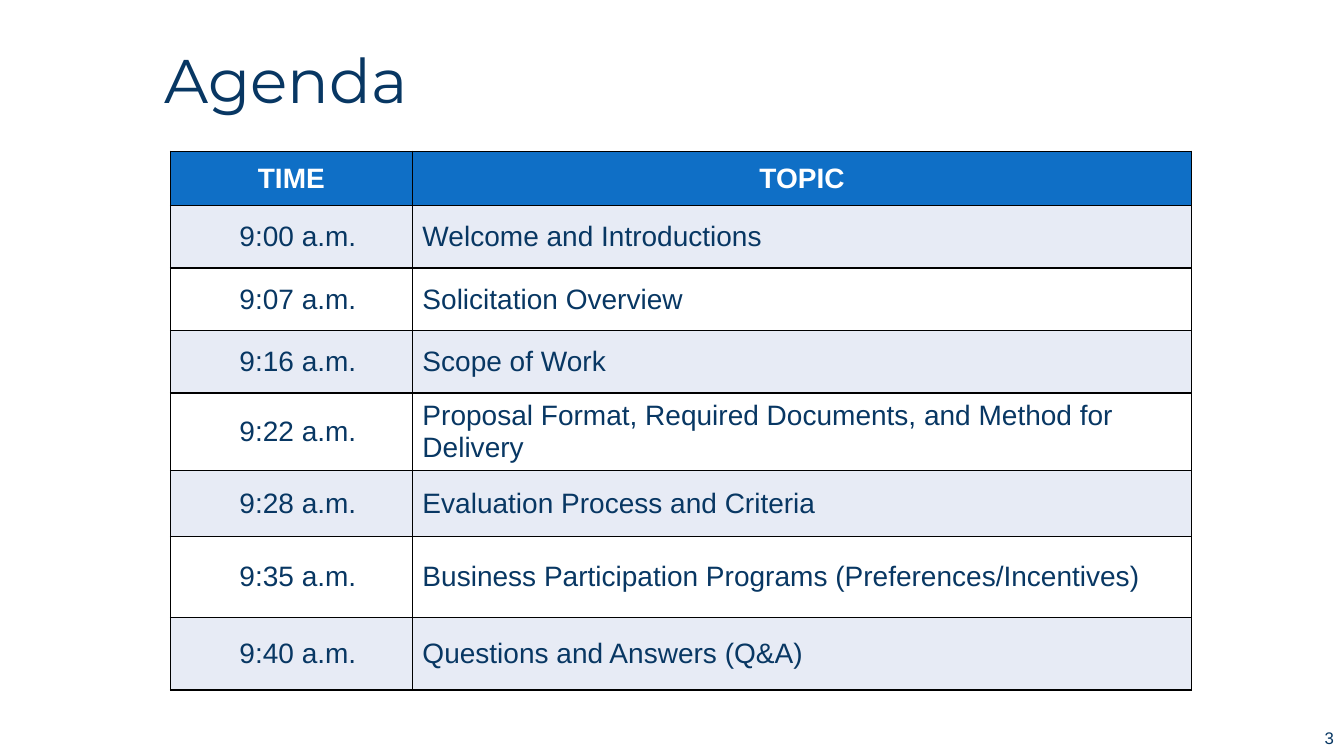
from dataclasses import dataclass

import lxml.etree
import pptx
import pptx.dml.color
import pptx.enum.text
import pptx.oxml.ns
import pptx.util

Inches = pptx.util.Inches
ALIGN = pptx.enum.text.PP_ALIGN
MIDDLE = pptx.enum.text.MSO_ANCHOR.MIDDLE


@dataclass(frozen=True)
class Theme:
    navy: str = "083763"
    blue: str = "0F6FC6"
    band: str = "E7EBF5"
    white: str = "FFFFFF"
    border: str = "000000"
    title_font: str = "Montserrat"
    body_font: str = "Arial"
    title_size: int = 44
    table_size: int = 20
    number_size: int = 12
    border_width: int = 1


AGENDA = [
    ("TIME", "TOPIC"),
    ("9:00 a.m.", "Welcome and Introductions"),
    ("9:07 a.m.", "Solicitation Overview"),
    ("9:16 a.m.", "Scope of Work"),
    ("9:22 a.m.", "Proposal Format, Required Documents, and Method for Delivery"),
    ("9:28 a.m.", "Evaluation Process and Criteria"),
    ("9:35 a.m.", "Business Participation Programs (Preferences/Incentives)"),
    ("9:40 a.m.", "Questions and Answers (Q&A)"),
]
COLUMN_WIDTHS = [2.4, 7.73]
ROW_HEIGHTS = [0.54, 0.62, 0.62, 0.62, 0.63, 0.66, 0.8, 0.72]
TIME_INDENT = 0.13


class SlideBuilder:
    def __init__(self, slide, theme):
        self.slide = slide
        self.theme = theme

    def fill_text(self, text_frame, text, color, font_format, paragraph_format):
        paragraph = text_frame.paragraphs[0]
        run = paragraph.add_run()
        run.text = text
        for target, values in ((paragraph, paragraph_format), (run.font, font_format)):
            for name, value in values.items():
                setattr(target, name, value)
        run.font.color.rgb = pptx.dml.color.RGBColor.from_string(color)
        return paragraph

    def text_box(self, text, bounds, font_format, paragraph_format):
        shape = self.slide.shapes.add_textbox(*map(Inches, bounds))
        shape.text_frame.word_wrap = True
        shape.text_frame.vertical_anchor = MIDDLE
        self.fill_text(shape.text_frame, text, self.theme.navy, font_format, paragraph_format)

    def border_cell(self, cell):
        properties = cell._tc.get_or_add_tcPr()
        width = str(pptx.util.Pt(self.theme.border_width))
        qn = pptx.oxml.ns.qn
        for side in ("a:lnL", "a:lnR", "a:lnT", "a:lnB"):
            line = lxml.etree.SubElement(properties, qn(side), w=width)
            fill = lxml.etree.SubElement(line, qn("a:solidFill"))
            lxml.etree.SubElement(fill, qn("a:srgbClr"), val=self.theme.border)

    def table_cell(self, cell, text, row, column):
        """Style the header, the banded rows and the indented time column."""
        theme = self.theme
        is_header, is_time = row == 0, column == 0
        fill = theme.blue if is_header else theme.band if row % 2 else theme.white
        self.border_cell(cell)
        cell.fill.solid()
        cell.fill.fore_color.rgb = pptx.dml.color.RGBColor.from_string(fill)
        cell.vertical_anchor = MIDDLE
        paragraph = self.fill_text(
            cell.text_frame, text, theme.white if is_header else theme.navy,
            {"name": theme.body_font, "size": pptx.util.Pt(theme.table_size), "bold": is_header},
            {"alignment": ALIGN.CENTER if is_header or is_time else ALIGN.LEFT})
        if is_time and not is_header:
            paragraph._p.get_or_add_pPr().set("marL", str(Inches(TIME_INDENT)))

    def table(self, rows, left, top, widths, heights):
        bounds = (left, top, sum(widths), sum(heights))
        table = self.slide.shapes.add_table(
            len(rows), len(widths), *map(Inches, bounds)).table
        for column, width in zip(table.columns, widths):
            column.width = Inches(width)
        for row, height in zip(table.rows, heights):
            row.height = Inches(height)
        for row, texts in enumerate(rows):
            for column, text in enumerate(texts):
                self.table_cell(table.cell(row, column), text, row, column)


def main():
    presentation = pptx.Presentation()
    presentation.slide_width = Inches(13.33)
    presentation.slide_height = Inches(7.5)
    theme = Theme()
    builder = SlideBuilder(
        presentation.slides.add_slide(presentation.slide_layouts[6]), theme)
    builder.text_box(
        "Agenda", (1.53, 0.26, 10.89, 1.14),
        {"name": theme.title_font, "size": pptx.util.Pt(theme.title_size)},
        {"alignment": ALIGN.LEFT, "line_spacing": 0.9})
    builder.table(AGENDA, 1.69, 1.5, COLUMN_WIDTHS, ROW_HEIGHTS)
    builder.text_box(
        "3", (11.36, 7.12, 1.97, 0.4),
        {"name": theme.body_font, "size": pptx.util.Pt(theme.number_size)},
        {"alignment": ALIGN.RIGHT})
    presentation.save("out.pptx")


if __name__ == "__main__":
    main()
